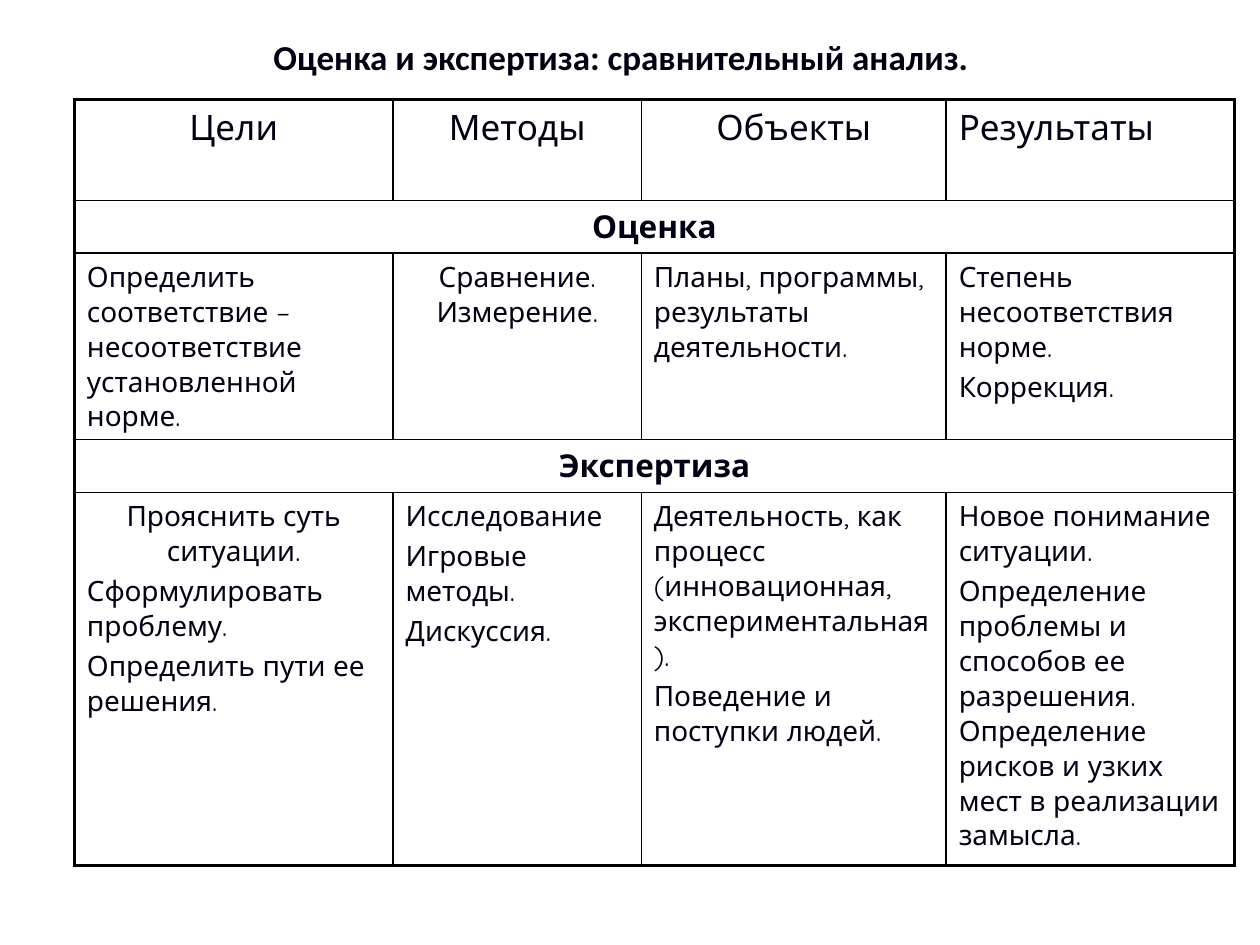
from lxml.etree import SubElement
from pptx import Presentation
from pptx.dml.color import RGBColor
from pptx.enum.text import MSO_ANCHOR, PP_ALIGN
from pptx.oxml.ns import qn
from pptx.util import Inches, Pt

INK = RGBColor(0x00, 0x00, 0x14)
LINE = RGBColor(0x00, 0x00, 0x00)
WIDE, HIGH = Inches(10), Inches(7.5)
THICK, THIN = Pt(2.25), Pt(1)
COLS = [2.53, 1.97, 2.42, 2.29]
ROWS = [0.8, 0.42, 1.48, 0.42, 2.96]

# Each cell is a list of paragraphs; a row with one cell spans the table
CELLS = [
    [["Цели"], ["Методы"], ["Объекты"], ["Результаты"]],
    [["Оценка"]],
    [["Определить соответствие –несоответствие установленной норме."],
     ["Сравнение. Измерение."],
     ["Планы, программы, результаты деятельности."],
     ["Степень несоответствия норме.", "Коррекция."]],
    [["Экспертиза"]],
    [["Прояснить суть ситуации.", "Сформулировать проблему.",
      "Определить пути ее решения."],
     ["Исследование", "Игровые методы.", "Дискуссия."],
     ["Деятельность, как процесс (инновационная, экспериментальная).",
      "Поведение и поступки людей."],
     ["Новое понимание ситуации.",
      "Определение проблемы и способов ее разрешения. "
      "Определение рисков и узких мест в реализации замысла."]],
]
# First paragraphs that are centred, as (row, column)
MID = {(0, 0), (0, 1), (0, 2), (1, 0), (2, 1), (3, 0), (4, 0)}


def style(para, size, face, bold=False, mid=False):
    para.alignment = PP_ALIGN.CENTER if mid else PP_ALIGN.LEFT
    for run in para.runs:
        font = run.font
        font.size, font.name, font.bold = Pt(size), face, bold
        font.color.rgb = INK


def add_title(slide, text):
    box = slide.shapes.add_textbox(
        int(WIDE * 0.043), 0, int(WIDE * 0.9), int(HIGH * 0.12))
    frame = box.text_frame
    frame.word_wrap = True
    frame.vertical_anchor = MSO_ANCHOR.MIDDLE
    frame.text = text
    style(frame.paragraphs[0], 20, "Calibri", bold=True, mid=True)


def add_edge(cell, tag, width):
    edge = SubElement(cell._tc.get_or_add_tcPr(), qn(tag), w=str(width))
    fill = SubElement(edge, qn("a:solidFill"))
    SubElement(fill, qn("a:srgbClr"), val=str(LINE))


def frame_cell(cell, row, col):
    # Outer edges are thick, inner ones thin
    outer = {"a:lnL": col == 0, "a:lnR": col == len(COLS) - 1,
             "a:lnT": row == 0, "a:lnB": row == len(ROWS) - 1}
    for tag, edge in outer.items():
        add_edge(cell, tag, THICK if edge else THIN)
    cell.fill.background()


def fill_cell(cell, lines, size, bold, mid):
    frame = cell.text_frame
    frame.text = "\n".join(lines)
    for i, para in enumerate(frame.paragraphs):
        if i:
            para.space_before = Pt(3)
        style(para, size, "Quicksand", bold, mid and i == 0)


def add_grid(slide):
    shape = slide.shapes.add_table(
        len(ROWS), len(COLS), Inches(0.59), Inches(0.79),
        Inches(sum(COLS)), Inches(sum(ROWS)))
    table = shape.table
    table.first_row = table.horz_banding = False
    for col, width in zip(table.columns, COLS):
        col.width = Inches(width)
    for row, height in zip(table.rows, ROWS):
        row.height = Inches(height)

    for r, cells in enumerate(CELLS):
        for c in range(len(COLS)):
            frame_cell(table.cell(r, c), r, c)
        band = len(cells) == 1
        if band:
            table.cell(r, 0).merge(table.cell(r, len(COLS) - 1))
            # The merged cell carries the right outer edge
            edge = table.cell(r, 0)._tc.tcPr.find(qn("a:lnR"))
            edge.set("w", str(THICK))
        size = 20 if r == 0 else 18 if band else 16
        for c, lines in enumerate(cells):
            fill_cell(table.cell(r, c), lines, size, band, (r, c) in MID)


def main():
    deck = Presentation()
    deck.slide_width, deck.slide_height = WIDE, HIGH
    slide = deck.slides.add_slide(deck.slide_layouts[6])
    add_title(slide, "Оценка и экспертиза: сравнительный анализ.")
    add_grid(slide)
    deck.save("out.pptx")


if __name__ == "__main__":
    main()
